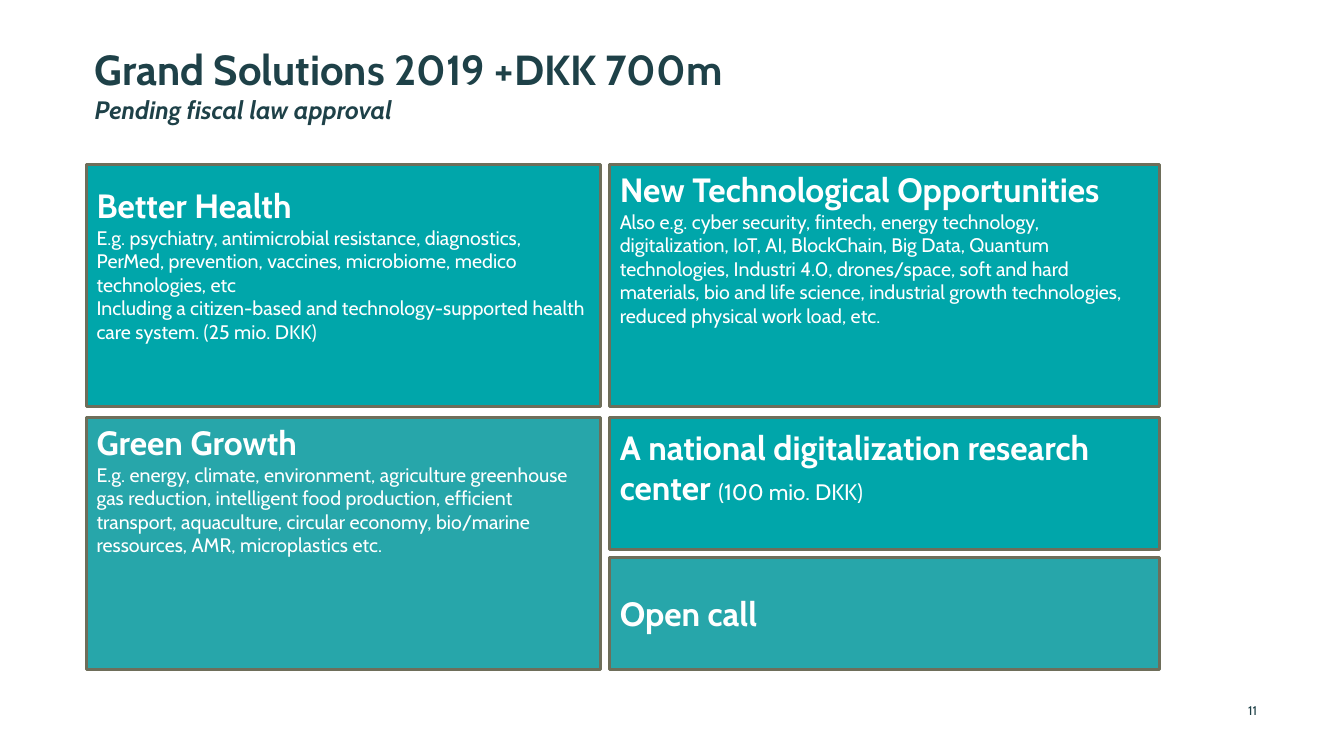
from dataclasses import dataclass

from pptx import Presentation
from pptx.dml.color import RGBColor
from pptx.enum.shapes import MSO_SHAPE
from pptx.enum.text import MSO_ANCHOR, PP_ALIGN
from pptx.util import Pt


@dataclass(frozen=True)
class Theme:
    """Colours, font and type sizes of the slide."""
    font: str = "Cabin"
    ink: str = "1E4148"
    white: str = "FFFFFF"
    teal: str = "00A6AA"
    soft_teal: str = "27A6AA"
    border: str = "6E6E5A"
    title: int = 30
    subtitle: int = 18
    heading: int = 24
    amount: int = 16
    body: int = 14
    number: int = 9


THEME = Theme()


def add_run(p, text, *, size, color=THEME.white, bold=False, italic=False):
    """Add formatted text to a paragraph."""
    r = p.add_run()
    r.text = text
    r.font.name = THEME.font
    r.font.size = Pt(size)
    r.font.bold = bold
    r.font.italic = italic
    r.font.color.rgb = RGBColor.from_string(color)


def add_plain_box(s, box):
    """Add a wrapping text box without margins and return its frame."""
    tf = s.shapes.add_textbox(*map(Pt, box)).text_frame
    tf.word_wrap = True
    tf.margin_left = tf.margin_right = tf.margin_top = tf.margin_bottom = 0
    return tf


def add_title(s, box, title, subtitle):
    """Place the title with its subtitle below."""
    tf = add_plain_box(s, box)
    add_run(tf.paragraphs[0], title, size=THEME.title, color=THEME.ink, bold=True)
    add_run(tf.add_paragraph(), subtitle, size=THEME.subtitle, color=THEME.ink,
            bold=True, italic=True)


def add_number(s, box, number):
    """Place the slide number."""
    tf = add_plain_box(s, box)
    tf.vertical_anchor = MSO_ANCHOR.MIDDLE
    p = tf.paragraphs[0]
    p.alignment = PP_ALIGN.RIGHT
    add_run(p, number, size=THEME.number, color=THEME.ink)


def add_card(s, box, heading, *body, fill=THEME.teal, amount="",
             anchor=MSO_ANCHOR.TOP, inset=3.6):
    """Place a bordered theme card with a heading and body paragraphs."""
    sp = s.shapes.add_shape(MSO_SHAPE.RECTANGLE, *map(Pt, box))
    sp.shadow.inherit = False
    sp.fill.solid()
    sp.fill.fore_color.rgb = RGBColor.from_string(fill)
    sp.line.color.rgb = RGBColor.from_string(THEME.border)
    sp.line.width = Pt(2.25)
    tf = sp.text_frame
    tf.word_wrap = True
    tf.vertical_anchor = anchor
    tf.margin_top = Pt(inset)
    p = tf.paragraphs[0]
    p.alignment = PP_ALIGN.LEFT
    add_run(p, heading, size=THEME.heading, bold=True)
    if amount:
        add_run(p, amount, size=THEME.amount)
    for text in body:
        p = tf.add_paragraph()
        p.alignment = PP_ALIGN.LEFT
        add_run(p, text, size=THEME.body)


def add_cards(s, box):
    """Lay out the five theme cards in two columns."""
    x, y, w, h = box
    left_w, gap_x = 367.2, 6.5
    top_h, gap_y = 172.8, 7.9
    center_h, gap_call = 94.3, 5.8
    right_x, right_w = x + left_w + gap_x, w - left_w - gap_x
    low_y, low_h = y + top_h + gap_y, h - top_h - gap_y
    call_y = low_y + center_h + gap_call
    add_card(s, (x, y, left_w, top_h), "Better Health",
             "E.g. psychiatry, antimicrobial resistance, diagnostics, PerMed, "
             "prevention, vaccines, microbiome, medico technologies, etc",
             "Including a citizen-based and technology-supported health care "
             "system. (25 mio. DKK)", inset=15)
    add_card(s, (right_x, y, right_w, top_h), "New Technological Opportunities",
             "Also e.g. cyber security, fintech, energy technology, digitalization, "
             "IoT, AI, BlockChain, Big Data, Quantum technologies, Industri 4.0, "
             "drones/space, soft and hard materials, bio and life science, "
             "industrial growth technologies, reduced physical work load, etc.")
    add_card(s, (x, low_y, left_w, low_h), "Green Growth",
             "E.g. energy, climate, environment, agriculture greenhouse gas "
             "reduction, intelligent food production, efficient transport, "
             "aquaculture, circular economy, bio/marine ressources, AMR, "
             "microplastics etc.", fill=THEME.soft_teal)
    add_card(s, (right_x, low_y, right_w, center_h),
             "A national digitalization research center ",
             amount="(100 mio. DKK)", inset=6.5)
    add_card(s, (right_x, call_y, right_w, y + h - call_y), "Open call",
             fill=THEME.soft_teal, anchor=MSO_ANCHOR.MIDDLE)


def main():
    """Build and save the slide."""
    prs = Presentation()
    prs.slide_width, prs.slide_height = Pt(960), Pt(540)
    s = prs.slides.add_slide(prs.slide_layouts[6])
    add_title(s, (67.7, 31, 869, 36.7), "Grand Solutions 2019 +DKK 700m",
              "Pending fiscal law approval")
    add_cards(s, (61.9, 117.4, 766.1, 360.7))
    add_number(s, (866.9, 493.2, 31, 28.8), "11")
    prs.save("out.pptx")


if __name__ == "__main__":
    main()
